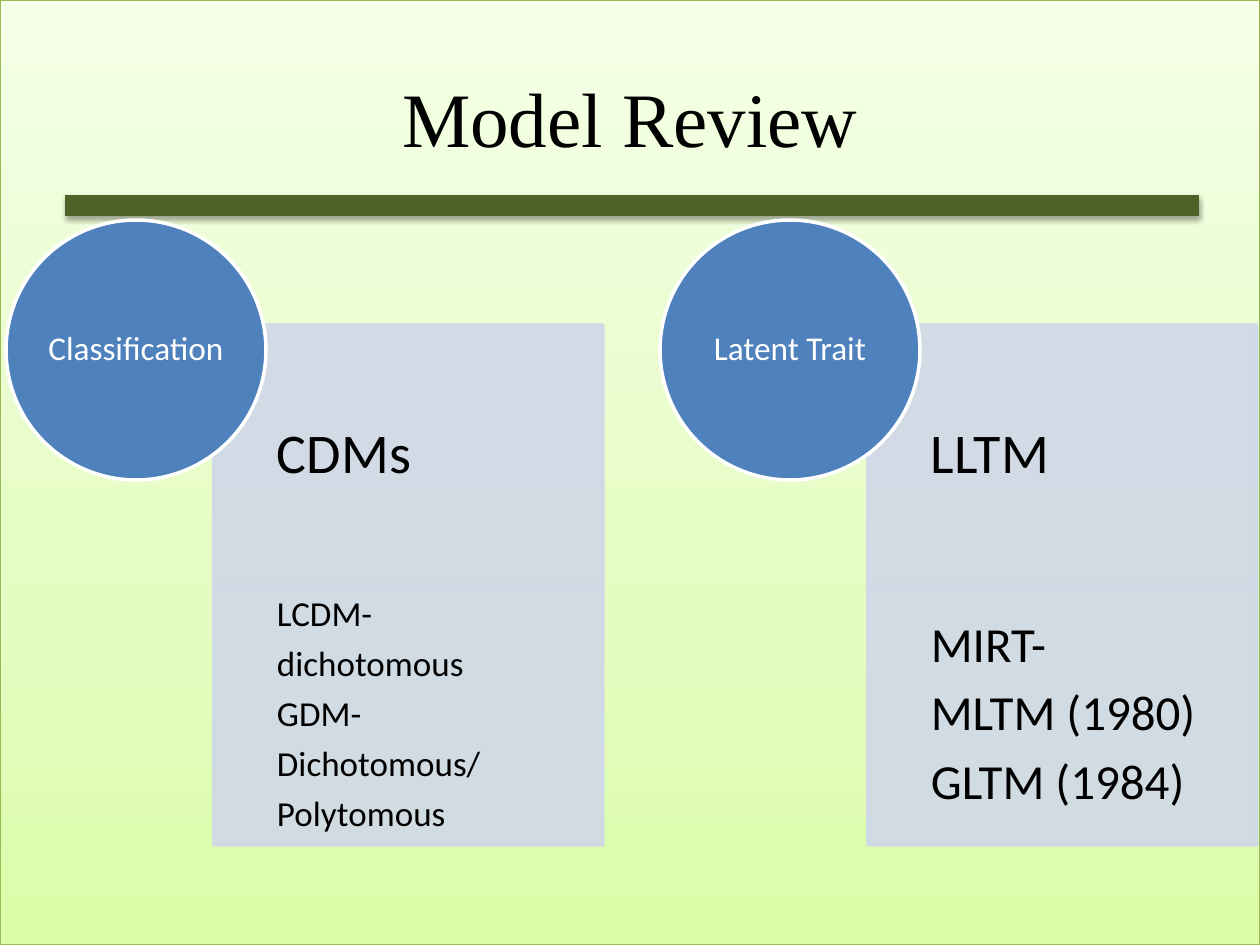
from copy import deepcopy

from pptx import Presentation
from pptx.dml.color import RGBColor
from pptx.enum.shapes import MSO_SHAPE as Shape
from pptx.enum.text import MSO_ANCHOR as Anchor, PP_ALIGN as Align
from pptx.oxml import parse_xml
from pptx.oxml.ns import nsdecls, qn
from pptx.util import Pt

PX = 914400 // 126
WIDTH, HEIGHT = 1260, 945

BLACK = RGBColor(0x00, 0x00, 0x00)
WHITE = RGBColor(0xFF, 0xFF, 0xFF)
BLUE = RGBColor(0x4F, 0x81, 0xBD)
PALE_BLUE = RGBColor(0xD0, 0xD8, 0xE8)
OLIVE = RGBColor(0x4F, 0x62, 0x28)
GREEN_EDGE = RGBColor(0x98, 0xB9, 0x55)
GREEN_STOPS = [
    (0, RGBColor(0xDA, 0xFD, 0xA7)),
    (0.35, RGBColor(0xE4, 0xFC, 0xC2)),
    (1, RGBColor(0xF5, 0xFF, 0xE7)),
]

CIRCLE_SIZE = 260
PANEL_LEFT, PANEL_TOP = 208, 105
PANEL_WIDTH, PANEL_HEIGHT = 389, 260
PANEL_INDENT = 63

# circle label, then (size, inset, lines) for each stacked panel
GROUPS = [
    (6, "Classification", [
        (32, 32, ["CDMs"]),
        (20, 20, ["LCDM-", "dichotomous", "GDM-", "Dichotomous/", "Polytomous"]),
    ]),
    (660, "Latent Trait", [
        (32, 32, ["LLTM"]),
        (28, 28, ["MIRT-", "MLTM (1980)", "GLTM (1984)"]),
    ]),
]


def px(*lengths):
    return [length * PX for length in lengths]


def add_box(slide, kind, box):
    shape = slide.shapes.add_shape(kind, *px(*box))
    shape.shadow.inherit = False
    return shape


def add_shadow(shape, distance, opacity):
    shape.element.spPr.find(qn("a:effectLst")).append(parse_xml(
        f'<a:outerShdw {nsdecls("a")} blurRad="{Pt(3.1)}" dist="{Pt(distance)}" '
        'dir="5400000" rotWithShape="0"><a:srgbClr val="000000">'
        f'<a:alpha val="{opacity * 1000}"/></a:srgbClr></a:outerShdw>'))


def make_translucent(shape, opacity):
    for color in shape.element.spPr.iter(qn("a:srgbClr")):
        color.append(parse_xml(
            f'<a:alpha {nsdecls("a")} val="{opacity * 1000}"/>'))


def write_lines(shape, lines, size, color, align, insets):
    frame = shape.text_frame
    frame.word_wrap = True
    frame.vertical_anchor = Anchor.MIDDLE
    (frame.margin_left, frame.margin_top,
     frame.margin_right, frame.margin_bottom) = px(*insets)
    frame.text = "\n".join(lines)
    for paragraph in frame.paragraphs:
        paragraph.alignment = align
        paragraph.line_spacing = 0.9
        paragraph.space_after = Pt(round(size * 0.33))
        for run in paragraph.runs:
            run.font.name = "Calibri"
            run.font.size = Pt(size)
            run.font.color.rgb = color


def add_backdrop(slide, box):
    backdrop = add_box(slide, Shape.RECTANGLE, box)
    backdrop.fill.gradient()
    backdrop.fill.gradient_angle = 90
    stop_list = backdrop.element.spPr.find(qn("a:gradFill")).find(qn("a:gsLst"))
    stop_list.insert(1, deepcopy(stop_list[0]))
    for stop, (position, color) in zip(backdrop.fill.gradient_stops, GREEN_STOPS):
        stop.position = position
        stop.color.rgb = color
    backdrop.line.color.rgb = GREEN_EDGE
    backdrop.line.width = Pt(0.75)
    add_shadow(backdrop, 1.6, 38)
    return backdrop


def add_title_bar(slide, box):
    bar = add_box(slide, Shape.MATH_MINUS, box)
    bar.fill.solid()
    bar.fill.fore_color.rgb = OLIVE
    bar.line.fill.background()
    add_shadow(bar, 1.8, 35)
    return bar


def format_title(title, text, box):
    title.left, title.top, title.width, title.height = px(*box)
    frame = title.text_frame
    frame.text = text
    frame.vertical_anchor = Anchor.MIDDLE
    paragraph = frame.paragraphs[0]
    paragraph.alignment = Align.CENTER
    font = paragraph.runs[0].font
    font.name = "Times New Roman"
    font.size = Pt(44)
    font.color.rgb = BLACK


def add_panel(slide, box, size, inset, lines):
    panel = add_box(slide, Shape.RECTANGLE, box)
    panel.fill.solid()
    panel.fill.fore_color.rgb = PALE_BLUE
    panel.line.color.rgb = PALE_BLUE
    panel.line.width = Pt(2)
    make_translucent(panel, 90)
    write_lines(panel, lines, size, BLACK, Align.LEFT,
                (PANEL_INDENT, inset, inset, inset))


def add_model_group(slide, left, top, label, panels):
    """Stack the panels and overlap their top left corner with a circle."""
    for row, (size, inset, lines) in enumerate(panels):
        box = (left + PANEL_LEFT, top + PANEL_TOP + row * PANEL_HEIGHT,
               PANEL_WIDTH, PANEL_HEIGHT)
        add_panel(slide, box, size, inset, lines)
    circle = add_box(slide, Shape.OVAL, (left, top, CIRCLE_SIZE, CIRCLE_SIZE))
    circle.fill.solid()
    circle.fill.fore_color.rgb = BLUE
    circle.line.color.rgb = WHITE
    circle.line.width = Pt(2)
    write_lines(circle, [label], 19, WHITE, Align.CENTER, (0, 0, 0, 0))


def main():
    presentation = Presentation()
    presentation.slide_width, presentation.slide_height = px(WIDTH, HEIGHT)
    slide = presentation.slides.add_slide(presentation.slide_layouts[5])
    title = slide.shapes.title
    format_title(title, "Model Review", (63, 38, 1134, 158))
    for decoration in (add_backdrop(slide, (0, 0, WIDTH, HEIGHT)),
                       add_title_bar(slide, (-139, 161, 1543, 89))):
        title.element.addprevious(decoration.element)
    for left, label, panels in GROUPS:
        add_model_group(slide, left, 220, label, panels)
    presentation.save("out.pptx")


if __name__ == "__main__":
    main()
